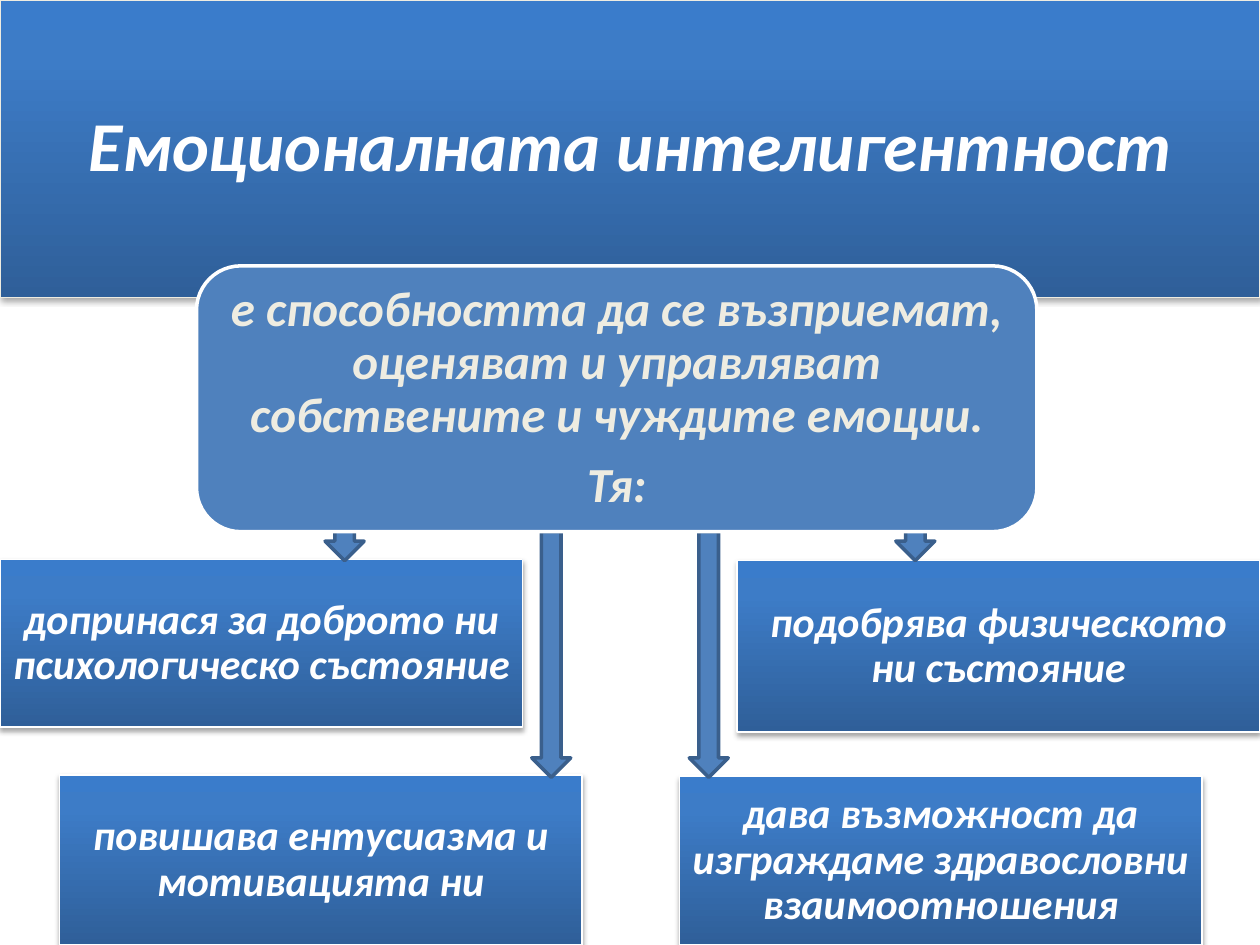
from copy import deepcopy

from lxml.etree import SubElement
from pptx import Presentation
from pptx.dml.color import RGBColor
from pptx.enum.shapes import MSO_SHAPE
from pptx.enum.text import MSO_ANCHOR, PP_ALIGN
from pptx.oxml.ns import qn
from pptx.util import Inches, Pt

FONT = "Calibri"
WHITE, CREAM = "FFFFFF", "EEECE1"
BLUE, DARK_BLUE = "4F81BD", "3A5F8C"
GRADIENT = [(0, "2F5F99"), (0.8, "3D7CC7"), (1, "3A7CCB")]


def rgb(value):
    return RGBColor.from_string(value)


class Deck:
    def __init__(self, prs):
        self.s = prs.slides.add_slide(prs.slide_layouts[6])

    def shape(self, kind, box, line, width):
        sp = self.s.shapes.add_shape(kind, *(Inches(v) for v in box))
        sp.shadow.inherit = False
        sp.line.color.rgb = rgb(line)
        sp.line.width = Pt(width)
        return sp

    def solid(self, kind, box, line):
        sp = self.shape(kind, box, line, 2)
        sp.fill.solid()
        sp.fill.fore_color.rgb = rgb(BLUE)
        return sp

    def text(self, sp, lines, size, color, inset):
        tf = sp.text_frame
        tf.word_wrap = True
        tf.vertical_anchor = MSO_ANCHOR.MIDDLE
        tf.margin_left = tf.margin_right = Inches(inset)
        tf.margin_top = tf.margin_bottom = Inches(inset)
        for i, line in enumerate(lines):
            p = tf.add_paragraph() if i else tf.paragraphs[0]
            p.text = line
            p.alignment = PP_ALIGN.CENTER
            p.line_spacing = 0.9
            p.space_after = Pt(size * 0.35)
            p.font.name, p.font.size = FONT, Pt(size)
            p.font.bold = p.font.italic = True
            p.font.color.rgb = rgb(color)

    def panel(self, box, label, size=24, inset=0.1, line=WHITE):
        sp = self.shape(MSO_SHAPE.RECTANGLE, box, line, 0.75)
        # Three-stop gradient, dark at the bottom
        sp.fill.gradient()
        sp.fill.gradient_angle = 90
        stops = sp._element.spPr.find(".//" + qn("a:gsLst"))
        stops.append(deepcopy(stops[-1]))
        for stop, (position, color) in zip(sp.fill.gradient_stops, GRADIENT):
            stop.position = position
            stop.color.rgb = rgb(color)
        # Soft shadow below
        effects = sp._element.spPr.find(qn("a:effectLst"))
        shadow = SubElement(effects, qn("a:outerShdw"), blurRad=str(Pt(3.1)),
                            dist=str(Pt(1.8)), dir="5400000", rotWithShape="0")
        black = SubElement(shadow, qn("a:srgbClr"), val="000000")
        SubElement(black, qn("a:alpha"), val="35000")
        self.text(sp, [label], size, WHITE, inset)

    def arrow(self, left, top, bottom):
        self.solid(MSO_SHAPE.DOWN_ARROW, (left, top, 0.31, bottom - top), DARK_BLUE)

    def definition(self, box, lines):
        sp = self.solid(MSO_SHAPE.ROUNDED_RECTANGLE, box, WHITE)
        self.text(sp, lines, 28, CREAM, 0.12)


def main():
    prs = Presentation()
    prs.slide_width, prs.slide_height = Inches(10), Inches(7.5)
    deck = Deck(prs)

    # Benefits
    for left, top, height, label in [
        (0, 4.44, 1.33, "допринася за доброто ни психологическо състояние"),
        (5.85, 4.45, 1.36, "подобрява физическото ни състояние"),
        (0.47, 6.15, 1.35, "повишава ентусиазма и мотивацията ни"),
        (5.39, 6.16, 1.34, "дава възможност да изграждаме здравословни взаимоотношения"),
    ]:
        deck.panel((left, top, 4.15, height), label)

    # Title band
    deck.panel((0, 0, 10, 2.36), "Емоционалната интелигентност", 40, 0.17, CREAM)

    # Arrows from the definition to the benefits
    for left, top, bottom in [(7.11, 3.98, 4.45), (2.58, 4.06, 4.45),
                              (4.22, 4.22, 6.17), (5.47, 4.22, 6.17)]:
        deck.arrow(left, top, bottom)

    # Definition
    deck.definition((1.56, 2.11, 6.67, 2.11), [
        "е способността да се възприемат, оценяват и управляват "
        "собствените и чуждите емоции.",
        "Тя:",
    ])

    prs.save("out.pptx")


if __name__ == "__main__":
    main()
